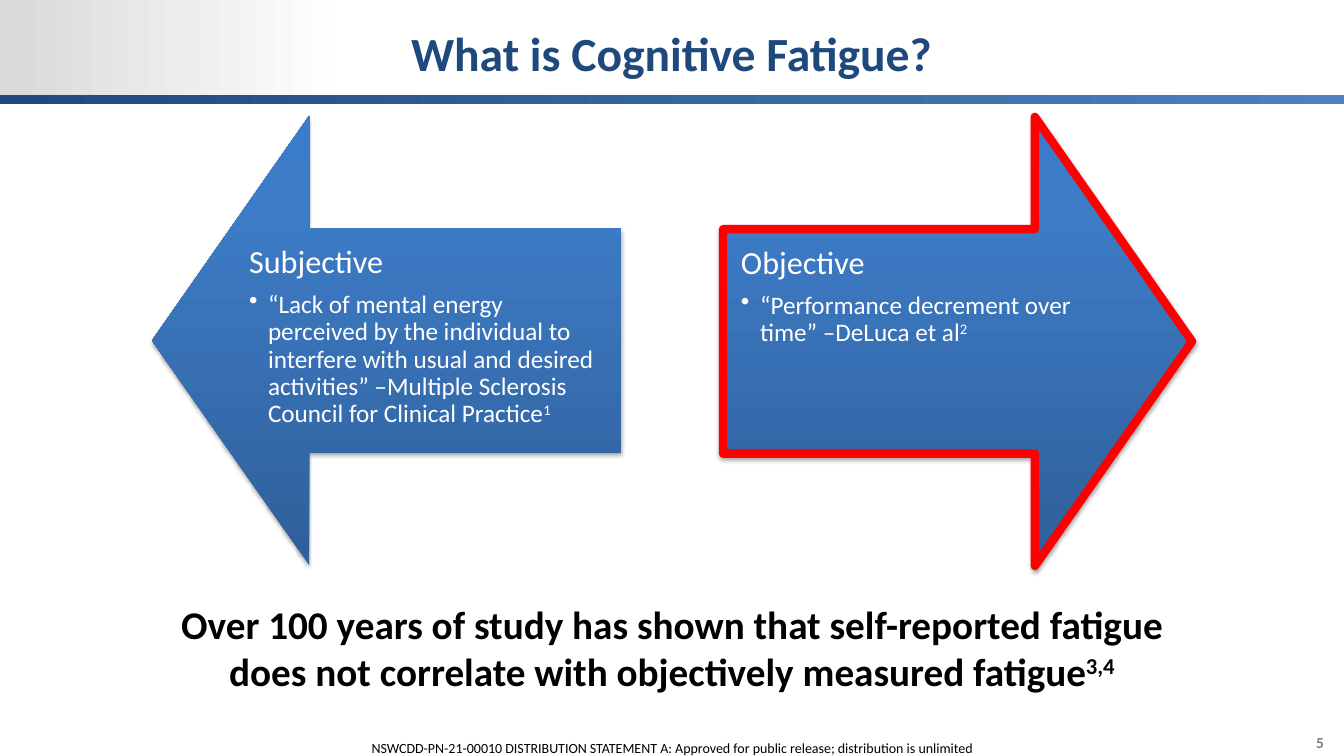
from lxml import etree
from pptx import Presentation
from pptx import util as u
from pptx.dml.color import RGBColor
from pptx.enum import shapes, text
from pptx.oxml import ns

PX = 914400 / 100.8
SLIDE = (1344, 756)
THEME = {
    "font": "Calibri", "navy": "1F497D", "white": "FFFFFF", "black": "000000",
    "gray": "808080", "red": "FF0000",
    "corner": [(0, "D9D9D9"), (100, "FFFFFF")],
    "rule": [(0, "1F497D"), (100, "4F81BD")],
    "arrow": [(0, "2F5F99"), (80, "3D7CC7"), (100, "3A7CCB")],
    "title": 34, "conclusion": 28, "heading": 23, "body": 18, "page": 11, "footer": 10,
}

TITLE = "What is Cognitive Fatigue?"
CONCLUSION = [("Over 100 years of study has shown that self-reported fatigue "
               "does not correlate with objectively measured fatigue", "3,4")]
FOOTER = ("NSWCDD-PN-21-00010 DISTRIBUTION STATEMENT A: "
          "Approved for public release; distribution is unlimited")
PAGE = "5"
BANDS = [((0, 0, 348, 104), "corner"), ((0, 95, 1344, 9), "rule")]
ARROWS = [
    {"heading": "Subjective", "quote": "“Lack of mental energy perceived by the individual to "
     "interfere with usual and desired activities” –Multiple Sclerosis Council for Clinical Practice",
     "note": "1", "at": (162, 106), "turn": 270, "text_shift": 69, "outline": None},
    {"heading": "Objective", "quote": "“Performance decrement over time” –DeLuca et al",
     "note": "2", "at": (733, 107), "turn": 90, "text_shift": -10, "outline": "red"},
]
ARROW_SIZE = (449, 469)
ARROW_TEXT_SIZE = (390, 225)
ARROW_TEXT_DROP = 122


def px(*values):
    return [u.Emu(round(value * PX)) for value in values]


def add_xml(parent, tag, **attributes):
    return etree.SubElement(parent, ns.qn(tag), {k: str(v) for k, v in attributes.items()})


def add_gradient_shape(slide, kind, box, stops, angle=0):
    shape = slide.shapes.add_shape(kind, *px(*box))
    shape.shadow.inherit = False
    shape.line.fill.background()
    shape.fill.gradient()
    gradient = shape.element.spPr.find(ns.qn("a:gradFill"))
    gradient.clear()
    gradient.set("rotWithShape", "0")
    stop_list = add_xml(gradient, "a:gsLst")
    for position, color in stops:
        add_xml(add_xml(stop_list, "a:gs", pos=position * 1000), "a:srgbClr", val=color)
    add_xml(gradient, "a:lin", ang=angle * 60000, scaled=0)
    return shape


def add_shadow(shape):
    effects = shape.element.spPr.find(ns.qn("a:effectLst"))
    shadow = add_xml(effects, "a:outerShdw", blurRad=u.Pt(3.1), dist=u.Pt(1.8),
                     dir=90 * 60000, rotWithShape=0)
    add_xml(add_xml(shadow, "a:srgbClr", val=THEME["black"]), "a:alpha", val=35000)


def add_text(slide, box, paragraphs, size, color="black", bold=False, align="LEFT",
             anchor="TOP", insets=(10, 5, 10, 5), grow=False):
    frame = slide.shapes.add_textbox(*px(*box)).text_frame
    frame.word_wrap = True
    frame.auto_size = text.MSO_AUTO_SIZE.SHAPE_TO_FIT_TEXT if grow else text.MSO_AUTO_SIZE.NONE
    frame.vertical_anchor = text.MSO_ANCHOR[anchor]
    (frame.margin_left, frame.margin_top,
     frame.margin_right, frame.margin_bottom) = px(*insets)
    for index, (words, note) in enumerate(paragraphs):
        paragraph = frame.add_paragraph() if index else frame.paragraphs[0]
        paragraph.alignment = text.PP_ALIGN[align]
        for content, raised in ((words, False), (note, True)):
            if not content:
                continue
            run = paragraph.add_run()
            run.text = content
            run.font.name = THEME["font"]
            run.font.size = u.Pt(THEME[size])
            run.font.bold = bold
            run.font.color.rgb = RGBColor.from_string(THEME[color])
            if raised:
                run.font._element.set("baseline", "30000")
    return frame


def add_arrow(slide, arrow):
    left, top = arrow["at"]
    shape = add_gradient_shape(slide, shapes.MSO_SHAPE.UP_ARROW,
                               (left, top, *ARROW_SIZE), THEME["arrow"], 270)
    shape.adjustments[0], shape.adjustments[1] = 0.5, 0.35
    shape.rotation = arrow["turn"]
    if arrow["outline"]:
        shape.line.color.rgb = RGBColor.from_string(THEME[arrow["outline"]])
        shape.line.width = u.Pt(6)
    add_shadow(shape)

    box = (left + arrow["text_shift"], top + ARROW_TEXT_DROP, *ARROW_TEXT_SIZE)
    frame = add_text(slide, box, [(arrow["heading"], ""), (arrow["quote"], arrow["note"])],
                     "body", "white", insets=(18, 18, 18, 18))
    heading, quote = frame.paragraphs
    heading.runs[0].font.size = u.Pt(THEME["heading"])
    for paragraph, gap in ((heading, 8), (quote, 3)):
        paragraph.line_spacing = 0.9
        paragraph.space_after = u.Pt(gap)
    quote.level = 1
    properties = quote._p.get_or_add_pPr()
    indent = px(19)[0]
    properties.set("marL", str(indent))
    properties.set("indent", str(-indent))
    add_xml(properties, "a:buChar", char="•")


def main():
    presentation = Presentation()
    presentation.slide_width, presentation.slide_height = px(*SLIDE)
    slide = presentation.slides.add_slide(presentation.slide_layouts[6])
    for box, stops in BANDS:
        add_gradient_shape(slide, shapes.MSO_SHAPE.RECTANGLE, box, THEME[stops])
    add_text(slide, (1145, 728, 199, 29), [(PAGE, "")], "page", "gray", bold=True,
             align="RIGHT", insets=(10, 5, 20, 5), grow=True)
    add_text(slide, (0, 735, 1344, 27), [(FOOTER, "")], "footer", align="CENTER", grow=True)
    add_text(slide, (237, 12, 869, 81), [(TITLE, "")], "title", "navy", bold=True,
             align="CENTER", anchor="MIDDLE")
    for arrow in ARROWS:
        add_arrow(slide, arrow)
    add_text(slide, (168, 595, 1008, 105), CONCLUSION, "conclusion", bold=True,
             align="CENTER", grow=True)
    presentation.save("out.pptx")


if __name__ == "__main__":
    main()
